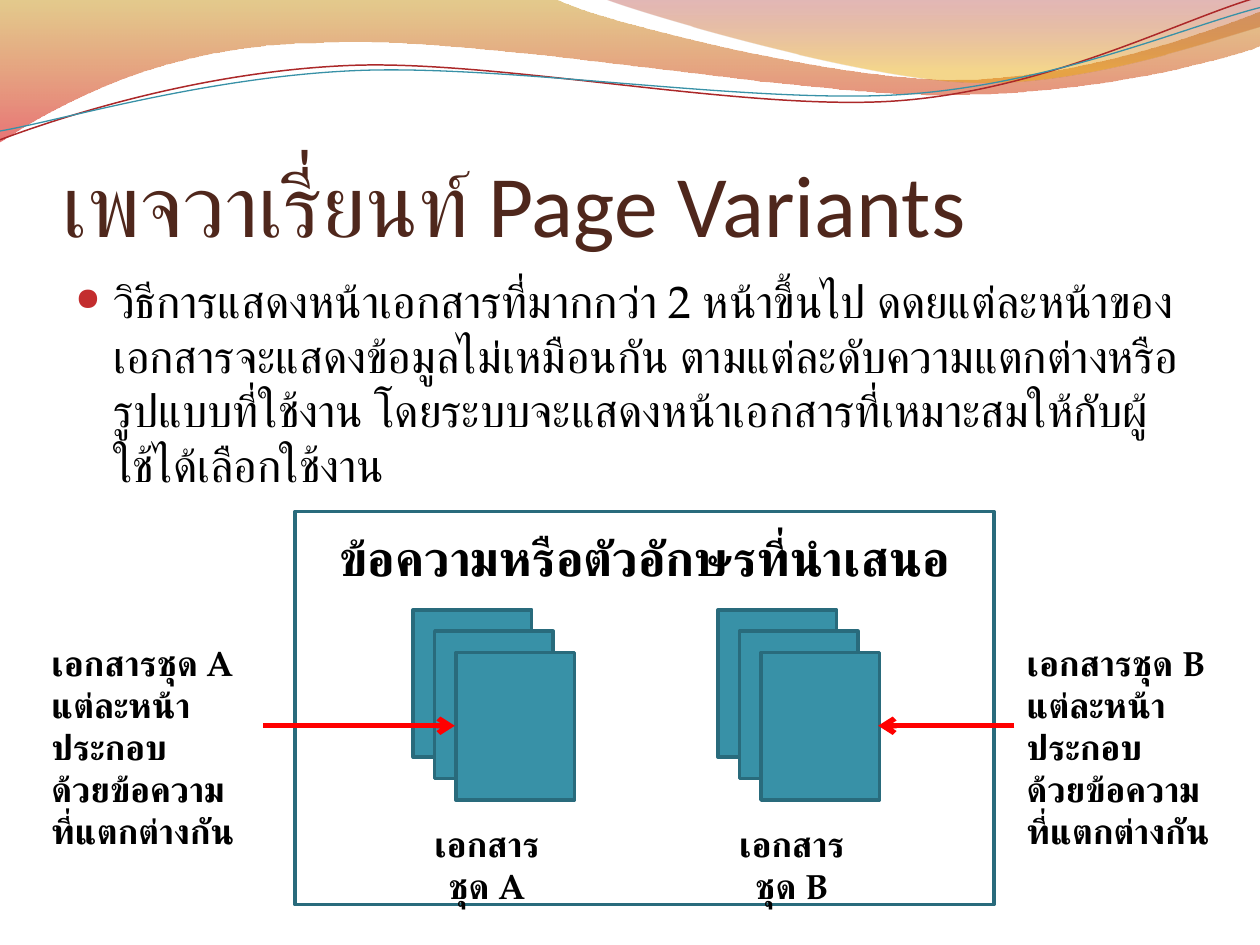
from dataclasses import dataclass
from math import cos, radians, sin

from lxml import etree
from pptx import Presentation
from pptx.dml.color import RGBColor
from pptx.enum.shapes import MSO_CONNECTOR, MSO_SHAPE
from pptx.enum.text import MSO_ANCHOR, PP_ALIGN
from pptx.oxml.ns import qn
from pptx.util import Emu, Pt

PX = 9144  # 100 px to the inch
FINE = 100  # outline units per px
RECT, STRAIGHT = MSO_SHAPE.RECTANGLE, MSO_CONNECTOR.STRAIGHT
LEFT, CENTER = PP_ALIGN.LEFT, PP_ALIGN.CENTER
TOP, BOTTOM = MSO_ANCHOR.TOP, MSO_ANCHOR.BOTTOM
SERIF, SANS = "TeX Gyre Pagella", "Calibri"
TEAL, DARK_TEAL, RED, BLACK = "3891A7", "296B7C", "FF0000", "000000"


@dataclass
class Wave:
    """Segments of one point are straight, segments of three points are cubic curves."""
    start: tuple
    segments: list
    stops: tuple = ()  # (position, colour, opacity %)
    line: tuple = ()  # (colour, points)
    tilt: float = 0
    center: tuple = (0, 0)


@dataclass
class Label:
    box: tuple
    lines: list
    size: int
    font: str = SERIF
    color: str = BLACK
    bold: bool = True
    align: PP_ALIGN = LEFT
    anchor: MSO_ANCHOR = TOP
    margins: tuple = (10, 5, 10, 5)


@dataclass
class DocumentSet:
    name: str
    stack_x: int
    note_x: int
    arrow_from: int
    arrow_to: int


WAVES = [
    Wave((0, -1), [((440, -1),),
                   ((476, 17), (664, 63), (758, 63)), ((853, 63), (958, 26), (1000, 9)),
                   ((1001, 36),),
                   ((983, 44), (870, 76), (746, 75)), ((622, 75), (382, 28), (257, 34)),
                   ((129, 35), (46, 83), (-1, 113))],
         stops=((0, "C38B00", 45), (1, "D60305", 55))),
    Wave((479, -1), [((509, 11), (682, 62), (769, 65)), ((856, 69), (961, 32), (1000, 21)),
                     ((1000, 0),)],
         stops=((0, "A11112", 30), (0.8, "E9A600", 45))),
    Wave((0, 111), [((48, 93), (158, 57), (277, 52)), ((395, 47), (593, 89), (713, 80)),
                    ((833, 71), (938, 15), (998, -2))],
         line=("AC2829", 0.85), tilt=-2.7, center=(499, 57.5)),
    Wave((0, 104), [((47, 96), (164, 61), (283, 56)), ((403, 51), (597, 83), (717, 75)),
                    ((836, 67), (941, 21), (1000, 6))],
         line=(TEAL, 0.75), tilt=-2.7, center=(499.5, 59)),
]

TITLE = Label((50, 77, 900, 125), ["เพจวาเรี่ยนท์ Page Variants"], 50, SANS, "4F271C",
              False, anchor=BOTTOM, margins=(0, 5, 0, 0))
BODY = Label((50, 212, 900, 480), [
    "วิธีการแสดงหน้าเอกสารที่มากกว่า 2 หน้าขึ้นไป ดดยแต่ละหน้าของ"
    "เอกสารจะแสดงข้อมูลไม่เหมือนกัน ตามแต่ละดับความแตกต่างหรือ"
    "รูปแบบที่ใช้งาน โดยระบบจะแสดงหน้าเอกสารที่เหมาะสมให้กับผู้"
    "ใช้ได้เลือกใช้งาน"], 26, bold=False)
HEADING = Label((242, 414, 539, 57), ["ข้อความหรือตัวอักษรที่นำเสนอ"], 28, align=CENTER)
NOTE = ["แต่ละหน้าประกอบ", "ด้วยข้อความ", "ที่แตกต่างกัน"]
SETS = [DocumentSet("เอกสารชุด A", 328, 31, 209, 361),
        DocumentSet("เอกสารชุด B", 570, 805, 805, 697)]
PAGES, PAGE_STEP, STACK_Y, ARROW_Y = 3, 17, 484, 576


def px(*lengths: int) -> list:
    return [Emu(n * PX) for n in lengths]


def rgb(color: str) -> RGBColor:
    return RGBColor.from_string(color)


def sub(parent, tag: str, **attrs):
    return etree.SubElement(parent, qn(tag), attrs)


def set_line(line, color: str, width: float) -> None:
    line.color.rgb = rgb(color)
    line.width = Pt(width)


def level(point: tuple, wave: Wave) -> tuple:
    """Turn a point back by the wave's tilt and give it in outline units."""
    (cx, cy), angle = wave.center, radians(-wave.tilt)
    dx, dy = point[0] - cx, point[1] - cy
    return (FINE * (cx + dx * cos(angle) - dy * sin(angle)),
            FINE * (cy + dx * sin(angle) + dy * cos(angle)))


def bend(sp, segments: list) -> None:
    """Join the straight steps of each three-point segment into one cubic curve."""
    steps = iter(list(sp._element.iter(qn("a:lnTo"))))
    for segment in segments:
        group = [next(steps) for _ in segment]
        if len(group) == 3:
            curve = etree.Element(qn("a:cubicBezTo"))
            group[0].addprevious(curve)
            for step in group:
                curve.append(step[0])
                step.getparent().remove(step)


def fill_gradient(fill, stops: tuple) -> None:
    fill.gradient()
    fill.gradient_angle = 270
    for stop, (position, color, opacity) in zip(fill.gradient_stops, stops):
        stop.position = position
        stop.color.rgb = rgb(color)
        sub(stop._gs[0], "a:alpha", val=str(opacity * 1000))


def draw_wave(shapes, wave: Wave) -> None:
    points = [level(point, wave) for segment in wave.segments for point in segment]
    builder = shapes.build_freeform(*level(wave.start, wave), scale=PX / FINE)
    builder.add_line_segments(points, close=bool(wave.stops))
    sp = builder.convert_to_shape()
    bend(sp, wave.segments)
    sp.shadow.inherit = False
    sp.rotation = wave.tilt
    if wave.stops:
        sp.line.fill.background()
        fill_gradient(sp.fill, wave.stops)
    else:
        sp.fill.background()
        set_line(sp.line, *wave.line)


def draw_label(shapes, label: Label):
    tf = shapes.add_textbox(*px(*label.box)).text_frame
    margins = zip(("left", "top", "right", "bottom"), px(*label.margins))
    frame = {"word_wrap": True, "vertical_anchor": label.anchor,
             **{f"margin_{side}": size for side, size in margins}}
    for name, value in frame.items():
        setattr(tf, name, value)
    font = {"size": Pt(label.size), "bold": label.bold, "name": label.font}
    for i, line in enumerate(label.lines):
        p = tf.add_paragraph() if i else tf.paragraphs[0]
        p.alignment = label.align
        r = p.add_run()
        r.text = line
        r.font.color.rgb = rgb(label.color)
        for name, value in font.items():
            setattr(r.font, name, value)
        r.font._element.set("kern", "0")
        sub(r.font._element, "a:cs", typeface=label.font)
    return tf


def add_bullet(p) -> None:
    p.space_before = Pt(5)
    ppr = p._p.get_or_add_pPr()
    hang = px(30)[0]
    ppr.set("marL", str(hang))
    ppr.set("indent", str(-hang))
    sub(sub(ppr, "a:buClr"), "a:srgbClr", val="C32D2E")
    sub(ppr, "a:buSzPct", val="70000")
    sub(ppr, "a:buChar", char="●")


def draw_rect(shapes, box: tuple, fill: str = "") -> None:
    sp = shapes.add_shape(RECT, *px(*box))
    sp.shadow.inherit = False
    if fill:
        sp.fill.solid()
        sp.fill.fore_color.rgb = rgb(fill)
    else:
        sp.fill.background()
    set_line(sp.line, DARK_TEAL, 2)


def draw_arrow(shapes, x1: int, x2: int, y: int) -> None:
    cxn = shapes.add_connector(STRAIGHT, *px(x1, y, x2, y))
    set_line(cxn.line, RED, 3)
    sub(cxn.line._get_or_add_ln(), "a:tailEnd", type="arrow")
    sub(cxn._element.spPr, "a:effectLst")


def draw_set(shapes, s: DocumentSet) -> None:
    for i in range(PAGES):
        shift = i * PAGE_STEP
        draw_rect(shapes, (s.stack_x + shift, STACK_Y + shift, 94, 117), TEAL)
    draw_label(shapes, Label((s.stack_x - 8, 648, 133, 44), [s.name], 20, align=CENTER))
    draw_label(shapes, Label((s.note_x, 504, 178, 145), [s.name, *NOTE], 20))
    draw_arrow(shapes, s.arrow_from, s.arrow_to, ARROW_Y)


def main() -> None:
    prs = Presentation()
    prs.slide_width, prs.slide_height = px(1000, 750)
    shapes = prs.slides.add_slide(prs.slide_layouts[6]).shapes
    for wave in WAVES:
        draw_wave(shapes, wave)
    draw_label(shapes, TITLE)
    add_bullet(draw_label(shapes, BODY).paragraphs[0])
    draw_label(shapes, HEADING)
    draw_rect(shapes, (234, 406, 555, 312))
    for s in SETS:
        draw_set(shapes, s)
    prs.save("out.pptx")


if __name__ == "__main__":
    main()
